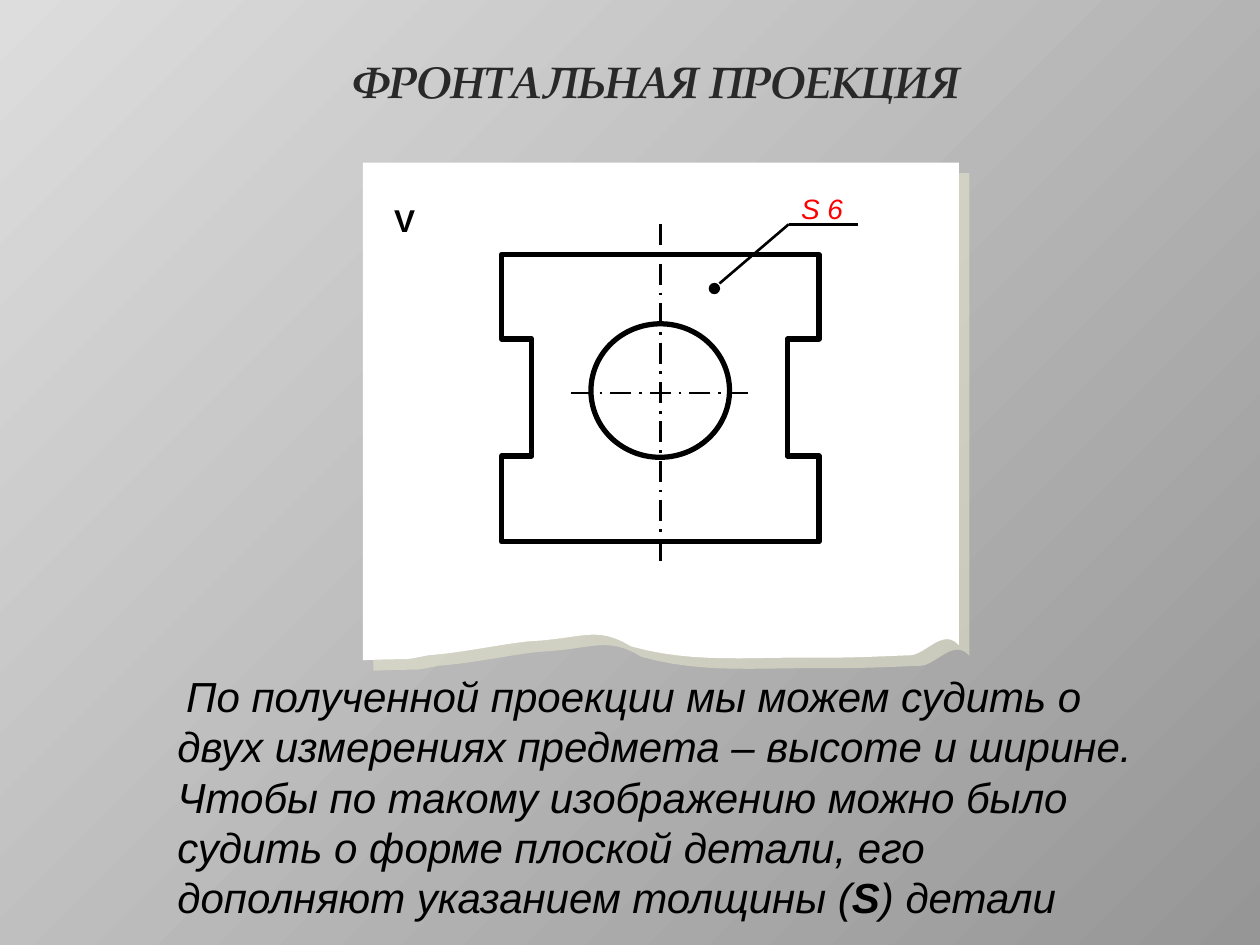
from dataclasses import dataclass

from lxml import etree
from pptx import Presentation
from pptx.dml.color import RGBColor
from pptx.enum import dml, shapes, text
from pptx.oxml import ns
from pptx import util as u


@dataclass(frozen=True)
class Theme:
    font: str = "Arial"
    title_font: str = "TeX Gyre Pagella"
    black: str = "000000"
    white: str = "FFFFFF"
    red: str = "FF0000"
    title: str = "292929"
    light: str = "DDDDDD"
    dark: str = "969696"
    paper_shadow: str = "ECEDD1"
    title_size: float = 25.2
    body_size: float = 24
    label_size: float = 18
    note_size: float = 16
    outline: float = 3
    thin: float = 1.5


class Drawing:
    def __init__(self, slide, theme):
        self.slide = slide
        self.theme = theme

    def shadow(self, properties, color, distance, alpha):
        effects = etree.SubElement(properties, ns.qn("a:effectLst"))
        outer = etree.SubElement(effects, ns.qn("a:outerShdw"), blurRad="0",
                                 dist=str(u.Pt(distance)), dir="2700000",
                                 algn="ctr", rotWithShape="0")
        shade = etree.SubElement(outer, ns.qn("a:srgbClr"), val=color)
        etree.SubElement(shade, ns.qn("a:alpha"), val=str(alpha * 1000))

    def paint(self, shape, fill, width=None, alpha=None):
        shape.fill.solid()
        shape.fill.fore_color.rgb = RGBColor.from_string(fill)
        if alpha:
            color = shape.fill._xPr.find(".//" + ns.qn("a:srgbClr"))
            etree.SubElement(color, ns.qn("a:alpha"), val=str(alpha * 1000))
        if width:
            shape.line.color.rgb = RGBColor.from_string(self.theme.black)
            shape.line.width = u.Pt(width)
        else:
            shape.line.fill.background()

    def backdrop(self, width, height):
        shape = self.slide.shapes.add_shape(
            shapes.MSO_SHAPE.RECTANGLE, 0, 0, width, height)
        shape.shadow.inherit = False
        shape.line.fill.background()
        shape.fill.gradient()
        shape.fill.gradient_angle = 315
        colors = (self.theme.light, self.theme.dark)
        for stop, color, position in zip(shape.fill.gradient_stops, colors, (0, 1)):
            stop.color.rgb = RGBColor.from_string(color)
            stop.position = position

    def ellipse(self, left, top, width, height, fill, line, rotation=0):
        shape = self.slide.shapes.add_shape(
            shapes.MSO_SHAPE.OVAL, *map(u.Inches, (left, top, width, height)))
        shape.shadow.inherit = False
        shape.rotation = rotation
        self.paint(shape, fill, line)

    def outline(self, points, fill, line=None, alpha=None):
        start, *others = [tuple(map(u.Inches, point)) for point in points]
        builder = self.slide.shapes.build_freeform(*start, scale=1.0)
        builder.add_line_segments(others, close=True)
        shape = builder.convert_to_shape()
        shape.shadow.inherit = False
        self.paint(shape, fill, line, alpha)
        return shape

    def paper(self, corners, curves):
        points = list(corners)
        for first, second, end in curves:
            start = points[-1]
            for step in range(1, 13):
                t = step / 12
                weights = ((1 - t) ** 3, 3 * t * (1 - t) ** 2, 3 * t * t * (1 - t), t ** 3)
                points.append(tuple(
                    sum(w * p[axis] for w, p in zip(weights, (start, first, second, end)))
                    for axis in (0, 1)))
        shape = self.outline(points, self.theme.white)
        properties = shape._element.spPr
        properties.remove(properties.find(ns.qn("a:effectLst")))
        self.shadow(properties, self.theme.paper_shadow, 8.5, 50)

    def line(self, start, end, dash=None):
        connector = self.slide.shapes.add_connector(
            shapes.MSO_CONNECTOR.STRAIGHT, *map(u.Inches, start + end))
        connector.line.color.rgb = RGBColor.from_string(self.theme.black)
        connector.line.width = u.Pt(self.theme.thin)
        if dash:
            connector.line.dash_style = dash
        etree.SubElement(connector._element.spPr, ns.qn("a:effectLst"))

    def text(self, place, spans, color, frame_format=None, align=None, shadow=None):
        box = self.slide.shapes.add_textbox(*map(u.Inches, place))
        frame = box.text_frame
        for name, value in {"word_wrap": True, **(frame_format or {})}.items():
            setattr(frame, name, value)
        para = frame.paragraphs[0]
        para.alignment = align
        for words, font_format in spans:
            span = para.add_run()
            span.text = words
            for name, value in {"name": self.theme.font, **font_format}.items():
                setattr(span.font, name, value)
            span.font.color.rgb = RGBColor.from_string(color)
            if shadow:
                properties = span.font._element
                self.shadow(properties, shadow, 2, 100)
                properties.insert(1, properties[-1])


def main():
    theme = Theme()
    deck = Presentation()
    deck.slide_width, deck.slide_height = u.Inches(10), u.Inches(7.5)
    page = deck.slides.add_slide(deck.slide_layouts[6])
    drawing = Drawing(page, theme)

    drawing.backdrop(deck.slide_width, deck.slide_height)
    drawing.text((1.07, 0.36, 8.27, 0.56),
                 [("ФРОНТАЛЬНАЯ ПРОЕКЦИЯ",
                   {"name": theme.title_font, "size": u.Pt(theme.title_size),
                    "bold": True, "italic": True})],
                 theme.title, {"vertical_anchor": text.MSO_ANCHOR.MIDDLE},
                 text.PP_ALIGN.CENTER, theme.white)

    drawing.paper(
        [(2.88, 5.24), (2.88, 1.29), (7.61, 1.29), (7.61, 5.12)],
        [((7.49, 4.98), (7.35, 5.19), (7.23, 5.2)),
         ((6.99, 5.21), (6.76, 5.22), (6.52, 5.22)),
         ((5.97, 5.21), (5.51, 5.27), (5.01, 5.13)),
         ((4.73, 4.96), (4.63, 5.07), (4.19, 5.09)),
         ((3.93, 5.12), (3.67, 5.18), (3.4, 5.2)),
         ((3.15, 5.25), (3.32, 5.22), (2.88, 5.24))])

    left, notch_left, notch_right, right = 3.98, 4.22, 6.25, 6.5
    top, notch_top, notch_bottom, bottom = 2.02, 2.69, 3.62, 4.3
    drawing.outline(
        [(left, bottom), (left, notch_bottom), (notch_left, notch_bottom),
         (notch_left, notch_top), (left, notch_top), (left, top),
         (right, top), (right, notch_top), (notch_right, notch_top),
         (notch_right, notch_bottom), (right, notch_bottom), (right, bottom)],
        theme.white, theme.outline, 43)
    drawing.ellipse(4.69, 2.57, 1.1, 1.06, theme.white, theme.outline, -2.1)

    axis = dml.MSO_LINE.LONG_DASH_DOT
    drawing.line((5.24, 1.78), (5.24, 4.46), axis)
    drawing.line((4.53, 3.12), (5.94, 3.12), axis)
    drawing.text((3.03, 1.55, 0.47, 0.4),
                 [("V", {"size": u.Pt(theme.label_size), "bold": True})], theme.black)

    elbow = (6.26, 1.78)
    drawing.line((5.71, 2.25), elbow)
    drawing.line(elbow, (6.81, 1.78))
    drawing.text((6.26, 1.47, 0.55, 0.37),
                 [("S 6", {"size": u.Pt(theme.note_size), "italic": True})], theme.red)
    drawing.ellipse(5.63, 2.25, 0.08, 0.08, theme.black, 0.75)

    body = {"size": u.Pt(theme.body_size), "italic": True}
    drawing.text((1.31, 5.27, 7.8, 2.12),
                 [(" ", {**body, "size": u.Pt(theme.label_size)}),
                  ("По полученной проекции мы можем судить о двух измерениях предмета – "
                   "высоте и ширине. Чтобы по такому изображению можно было судить о форме "
                   "плоской детали, его дополняют указанием толщины (", body),
                  ("S", {**body, "bold": True}),
                  (") детали", body)], theme.black)
    deck.save("out.pptx")


if __name__ == "__main__":
    main()
